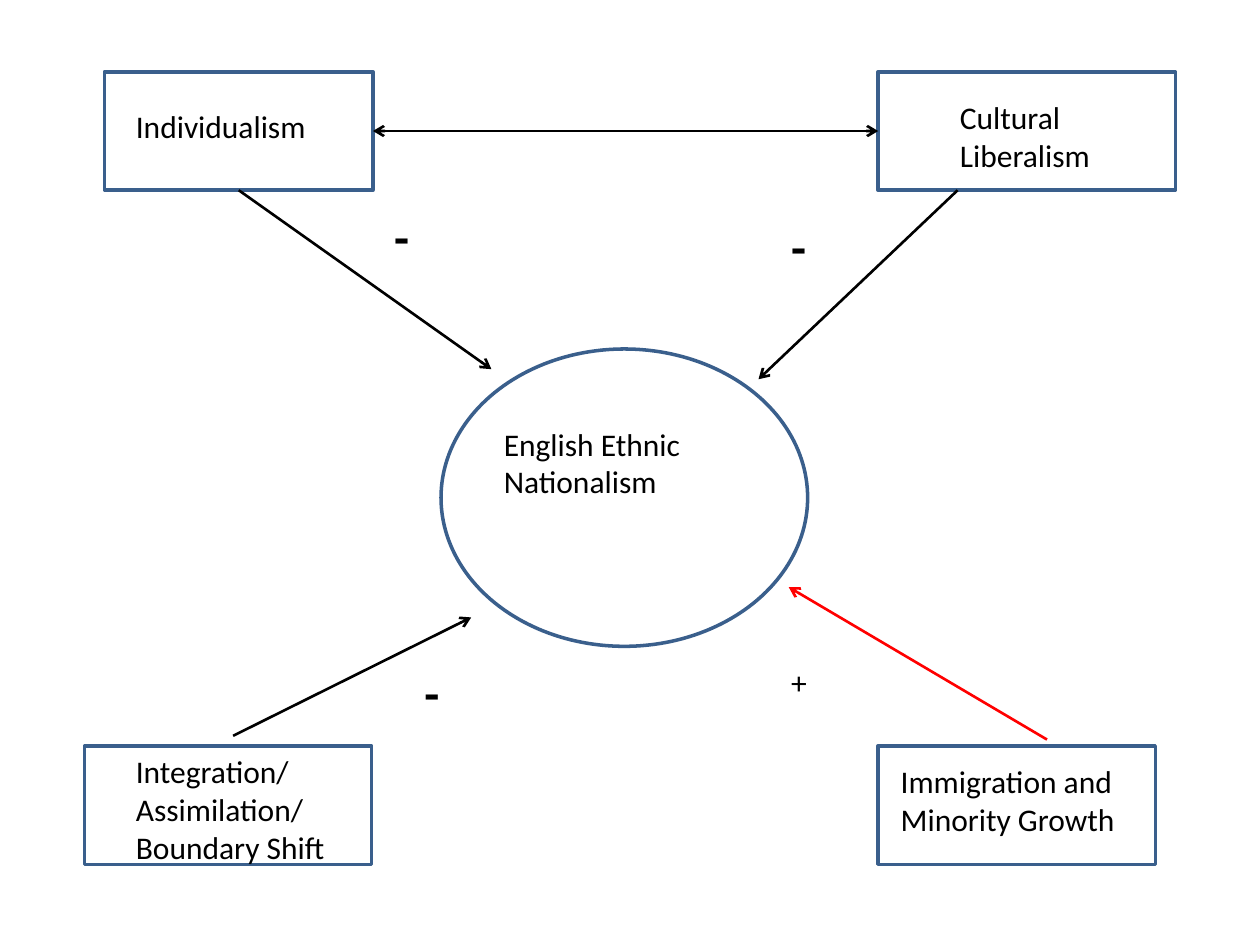
from lxml.etree import SubElement
from pptx import Presentation
from pptx.dml.color import RGBColor
from pptx.enum.shapes import MSO_CONNECTOR as Link, MSO_SHAPE as Form
from pptx.oxml.ns import qn
from pptx.util import Inches, Pt

BLUE = RGBColor(0x3A, 0x5F, 0x8C)
BLACK = RGBColor(0, 0, 0)
RED = RGBColor(0xFF, 0, 0)
WIDE, HIGH = 10, 7.5
TOP, LOW, TALL, RIGHT = 0.57, 5.92, 0.94, 6.97
PLAIN = {"name": "Calibri", "size": Pt(18)}
SIGN = {"name": "Calibri", "size": Pt(28), "bold": True}


def frame(slide, form, *box):
    """Draw an unfilled outline and return it."""
    shape = slide.shapes.add_shape(form, *map(Inches, box))
    shape.shadow.inherit = False
    shape.fill.background()
    shape.line.color.rgb = BLUE
    shape.line.width = Pt(2)
    return shape


def label(slide, text, box, style=PLAIN):
    """Write wrapped text, one paragraph per line."""
    body = slide.shapes.add_textbox(*map(Inches, box)).text_frame
    body.word_wrap = True
    body.text = text
    for para in body.paragraphs:
        font = para.runs[0].font
        font.color.rgb = BLACK
        for key, value in style.items():
            setattr(font, key, value)


def arrow(slide, start, end, color=BLACK, tips=("tailEnd",)):
    """Draw a straight arrow and return it."""
    line = slide.shapes.add_connector(Link.STRAIGHT, *map(Inches, start + end))
    line.line.color.rgb = color
    line.line.width = Pt(1.5)
    for tip in tips:
        SubElement(line.line._get_or_add_ln(), qn("a:" + tip), type="arrow")
    SubElement(line._element.spPr, qn("a:effectLst"))
    return line


def main():
    """Build the diagram of forces on nationalism."""
    deck = Presentation()
    deck.slide_width, deck.slide_height = Inches(WIDE), Inches(HIGH)
    slide = deck.slides.add_slide(deck.slide_layouts[6])

    frame(slide, Form.OVAL, 3.5, 2.77, 2.91, 2.36)
    self_box, free_box, _, _ = [
        frame(slide, Form.RECTANGLE, left, top, width, TALL)
        for left, top, width in (
            (0.83, TOP, 2.13), (RIGHT, TOP, 2.36),
            (0.67, LOW, 2.28), (RIGHT, LOW, 2.2))]

    for text, box in (
            ("English Ethnic Nationalism", (3.9, 3.32, 2.13, 0.71)),
            ("Individualism", (0.98, 0.8, 2.99, 0.4)),
            ("Cultural Liberalism", (7.52, 0.73, 1.81, 0.71)),
            ("Integration/ Assimilation/\nBoundary Shift", (0.98, LOW, 1.97, 1.01)),
            ("Immigration and Minority Growth", (7.05, 6, 2.2, 0.71)),
            ("+", (6.18, 5.21, 0.94, 0.4))):
        label(slide, text, box)
    for left, top in ((3.27, 5.21), (3.03, 1.59), (6.18, 1.67)):
        label(slide, "-", (left, top, 0.87, 0.57), SIGN)

    arrow(slide, (1.85, 5.84), (3.74, 4.9))
    arrow(slide, (7.6, 1.51), (6.02, 3.01))
    arrow(slide, (8.31, 5.87), (6.26, 4.66), RED)
    arrow(slide, (1.89, 1.51), (3.9, 2.93)).begin_connect(self_box, 2)
    both = arrow(slide, (2.96, 1.04), (RIGHT, 1.04), tips=("headEnd", "tailEnd"))
    both.begin_connect(self_box, 3)
    both.end_connect(free_box, 1)
    deck.save("out.pptx")


if __name__ == "__main__":
    main()
